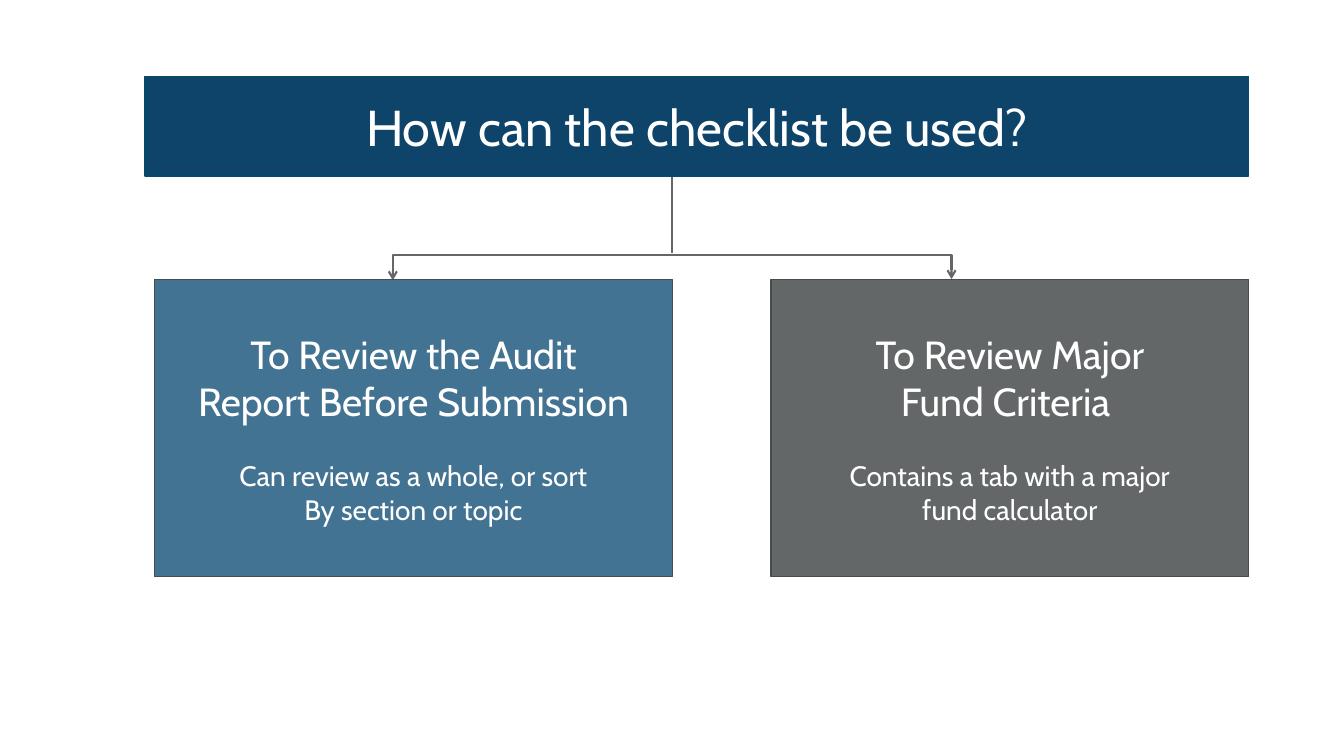
from lxml import etree
from pptx import Presentation
from pptx.dml.color import RGBColor
from pptx.enum.shapes import MSO_CONNECTOR, MSO_SHAPE
from pptx.enum.text import MSO_ANCHOR, PP_ALIGN
from pptx.oxml.ns import qn
from pptx.util import Cm, Pt

RECTANGLE = MSO_SHAPE.RECTANGLE
STRAIGHT, ELBOW = MSO_CONNECTOR.STRAIGHT, MSO_CONNECTOR.ELBOW
MIDDLE, CENTER = MSO_ANCHOR.MIDDLE, PP_ALIGN.CENTER

THEME = {
    "font": "Cabin",
    "text": RGBColor.from_string("FFFFFF"),
    "banner": RGBColor.from_string("0E4469"),
    "banner_edge": RGBColor.from_string("014B71"),
    "audit": RGBColor.from_string("437392"),
    "fund": RGBColor.from_string("636768"),
    "use_edge": RGBColor.from_string("494C4D"),
    "branch": RGBColor.from_string("636768"),
    "question_size": Pt(36),
    "use_size": Pt(28),
    "detail_size": Pt(20),
    "detail_gap": Pt(24.3),
}

deck = Presentation()
deck.slide_width, deck.slide_height = Cm(33.87), Cm(19.05)
slide = deck.slides.add_slide(deck.slide_layouts[6])


def add_panel(bounds, fill, edge, lines):
    """Add a filled box; lines holds (text, size, space before)."""
    panel = slide.shapes.add_shape(RECTANGLE, *[Cm(v) for v in bounds])
    panel.shadow.inherit = False
    panel.fill.solid()
    panel.fill.fore_color.rgb = THEME[fill]
    panel.line.color.rgb = THEME[edge]
    panel.line.width = Pt(1)
    frame = panel.text_frame
    for name, value in {"word_wrap": True, "vertical_anchor": MIDDLE}.items():
        setattr(frame, name, value)
    for index, (text, size, gap) in enumerate(lines):
        paragraph = frame.add_paragraph() if index else frame.paragraphs[0]
        paragraph.alignment = CENTER
        if gap:
            paragraph.space_before = THEME[gap]
        run = paragraph.add_run()
        run.text = text
        for name, value in {"name": THEME["font"], "size": THEME[size]}.items():
            setattr(run.font, name, value)
        run.font.color.rgb = THEME["text"]


def add_branch(kind, start, end):
    """Add a grey connector without a shadow."""
    branch = slide.shapes.add_connector(kind, *[Cm(v) for v in start + end])
    branch.line.color.rgb = THEME["branch"]
    branch.line.width = Pt(1.5)
    etree.SubElement(branch._element.spPr, qn("a:effectLst"))
    return branch


# Question banner
add_panel((3.66, 1.93, 27.81, 2.51), "banner", "banner_edge",
          [("How can the checklist be used?", "question_size", None)])

# Fork: an elbow connector turned by 90 degrees, with an arrow at both ends
center_x, center_y = 16.94, 7.05
half_span, half_drop, bar_rise = 7.04, 0.015, 0.63
fork = add_branch(ELBOW, (center_x + half_drop, center_y + half_span),
                  (center_x - half_drop, center_y - half_span))
fork_properties = fork._element.spPr
fork_properties.find(qn("a:xfrm")).set("rot", str(90 * 60000))
bend = round(bar_rise / (2 * half_drop) * 100000)
adjustments = fork_properties.find(qn("a:prstGeom")).find(qn("a:avLst"))
etree.SubElement(adjustments, qn("a:gd"), name="adj1", fmla=f"val {bend}")
for arrowhead in ("a:headEnd", "a:tailEnd"):
    etree.SubElement(fork.line._get_or_add_ln(), qn(arrowhead), type="arrow")

# Stem from the banner to the fork
add_branch(STRAIGHT, (center_x, 4.45), (center_x, 6.38))

# The two uses of the checklist
uses = [
    (3.89, 13.06, "audit",
     ("To Review the Audit", "Report Before Submission"),
     ("Can review as a whole, or sort", "By section or topic")),
    (19.43, 12.04, "fund",
     ("To Review Major", "Fund Criteria "),
     ("Contains a tab with a major", "fund calculator")),
]
for left, width, fill, heading, detail in uses:
    lines = [(text, "use_size", None) for text in heading]
    lines += [(text, "detail_size", None if index else "detail_gap")
              for index, text in enumerate(detail)]
    add_panel((left, 7.04, width, 7.49), fill, "use_edge", lines)

deck.save("out.pptx")
